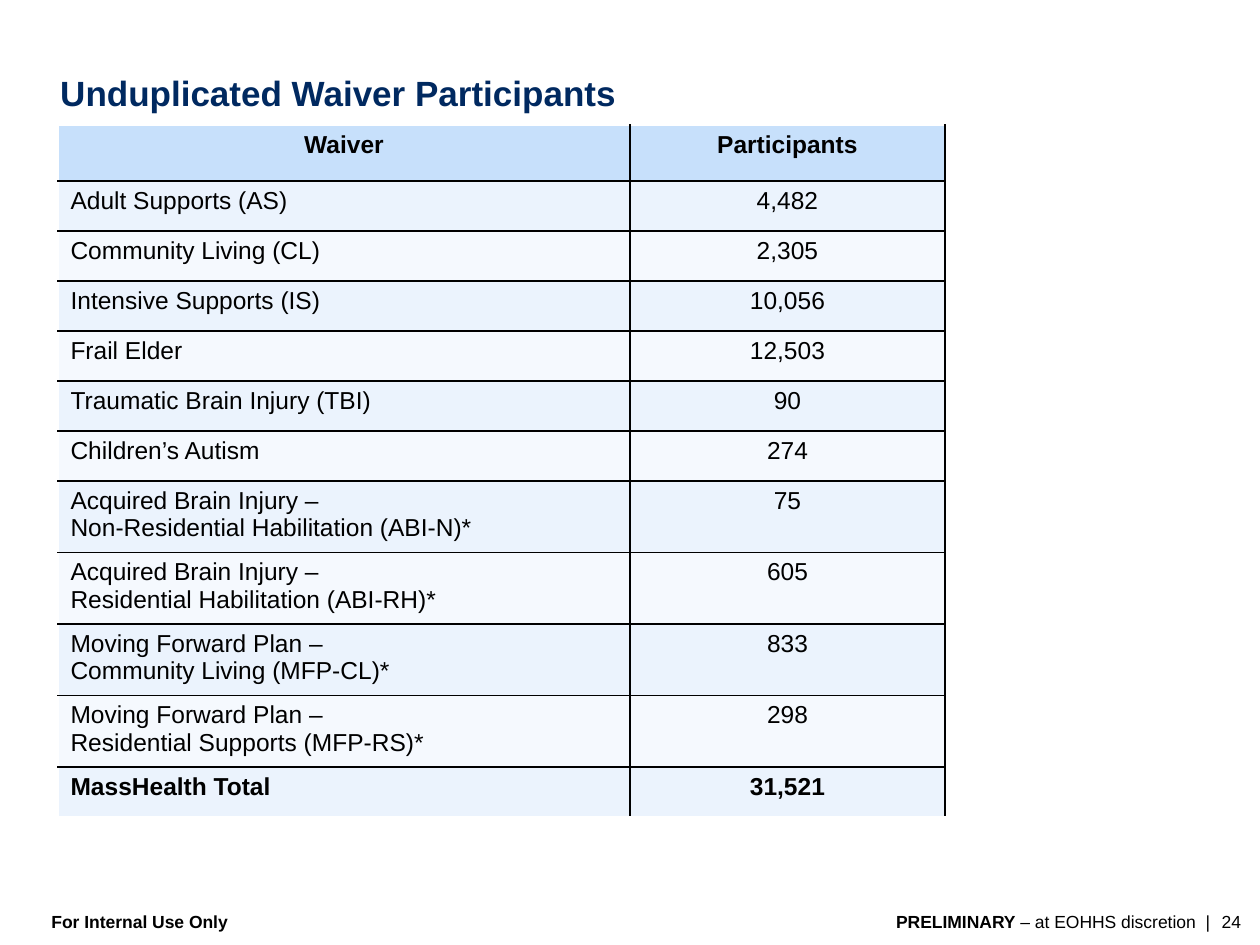
from lxml import etree
from pptx import Presentation
from pptx import util as u
from pptx.dml.color import RGBColor
from pptx.enum import text
from pptx.oxml.ns import qn

SLIDE_W, SLIDE_H = u.Inches(10), u.Inches(7.5)
COLUMN, ROW = SLIDE_W / 100, SLIDE_H / 75
FONT = "Arial"
COLOURS = {
    "ink": "000000",
    "title": "002960",
    "rule": "000000",
    "edge": "FFFFFF",
    "header": "C7E0FB",
    "odd": "EBF3FD",
    "even": "F5F9FE",
}
PARTICIPANTS = [
    ("Waiver", "Participants"),
    ("Adult Supports (AS)", "4,482"),
    ("Community Living (CL)", "2,305"),
    ("Intensive Supports (IS)", "10,056"),
    ("Frail Elder", "12,503"),
    ("Traumatic Brain Injury (TBI)", "90"),
    ("Children’s Autism", "274"),
    ("Acquired Brain Injury –\nNon-Residential Habilitation (ABI-N)*", "75"),
    ("Acquired Brain Injury –\nResidential Habilitation (ABI-RH)*", "605"),
    ("Moving Forward Plan –\nCommunity Living (MFP-CL)*", "833"),
    ("Moving Forward Plan –\nResidential Supports (MFP-RS)*", "298"),
    ("MassHealth Total", "31,521"),
]
HEADER_ROWS, BODY_ROWS = 4.45, 3.97
WAIVER_SHARE = 0.645


def box(left, top, width, height):
    return (round(left * COLUMN), round(top * ROW),
            round(width * COLUMN), round(height * ROW))


def set_font(font, size, bold=False, colour="ink"):
    font.name, font.size, font.bold = FONT, u.Pt(size), bold
    font.color.rgb = RGBColor.from_string(COLOURS[colour])


def add_label(slide, area, wording, size, bold=True, colour="ink", inset=True, wrap=True):
    frame = slide.shapes.add_textbox(*area).text_frame
    frame.word_wrap = wrap
    frame.auto_size = text.MSO_AUTO_SIZE.SHAPE_TO_FIT_TEXT
    if not inset:
        frame.margin_left = frame.margin_right = frame.margin_top = frame.margin_bottom = 0
    paragraph = frame.paragraphs[0]
    set_font(paragraph.font, size, bold, colour)
    paragraph.add_run().text = wording
    return paragraph


def set_borders(cell, colours):
    properties = cell._tc.get_or_add_tcPr()
    for side, colour in zip(("lnL", "lnR", "lnT", "lnB"), colours):
        line = etree.SubElement(properties, qn(f"a:{side}"), w=str(u.Pt(1)))
        fill = etree.SubElement(line, qn("a:solidFill"))
        etree.SubElement(fill, qn("a:srgbClr"), val=COLOURS[colour])


def add_participants_table(slide, area):
    last = len(PARTICIPANTS) - 1
    table = slide.shapes.add_table(last + 1, 2, *area).table
    table.columns[0].width = round(area[2] * WAIVER_SHARE)
    table.columns[1].width = area[2] - table.columns[0].width
    for row, entries in enumerate(PARTICIPANTS):
        table.rows[row].height = round((BODY_ROWS if row else HEADER_ROWS) * ROW)
        band = "header" if row == 0 else "odd" if row % 2 else "even"
        for column, entry in enumerate(entries):
            cell = table.cell(row, column)
            cell.text = entry
            set_borders(cell, ("rule" if column else "edge", "rule",
                               "rule" if row else "edge",
                               "edge" if row == last else "rule"))
            cell.fill.solid()
            cell.fill.fore_color.rgb = RGBColor.from_string(COLOURS[band])
            for paragraph in cell.text_frame.paragraphs:
                set_font(paragraph.font, 14, row in (0, last))
                if row == 0 or column:
                    paragraph.alignment = text.PP_ALIGN.CENTER


def add_footer(slide, area):
    left, top, width, height = area
    add_label(slide, (left, top - round(0.5 * ROW), round(width * 0.27), round(2.7 * ROW)),
              "For Internal Use Only", 10)
    status = add_label(slide, (left + round(width * 0.713), top, round(width * 0.27), height),
                       "PRELIMINARY", 10, bold=False, inset=False)
    status.runs[0].font.bold = True
    status.add_run().text = " – at EOHHS discretion  |"
    number_width = round(1.8 * COLUMN)
    page = add_label(slide, (left + width - number_width, top, number_width, height),
                     "24", 10, bold=False, inset=False, wrap=False)
    page.alignment = text.PP_ALIGN.RIGHT


def main():
    deck = Presentation()
    deck.slide_width, deck.slide_height = SLIDE_W, SLIDE_H
    slide = deck.slides.add_slide(deck.slide_layouts[6])
    add_footer(slide, box(3.1, 72.3, 95.4, 1.7))
    add_label(slide, box(3.8, 5.2, 95, 4.4), "Unduplicated Waiver Participants", 20, colour="title")
    add_participants_table(slide, box(4.6, 9.9, 70.4, 54.9))
    deck.save("out.pptx")


if __name__ == "__main__":
    main()
